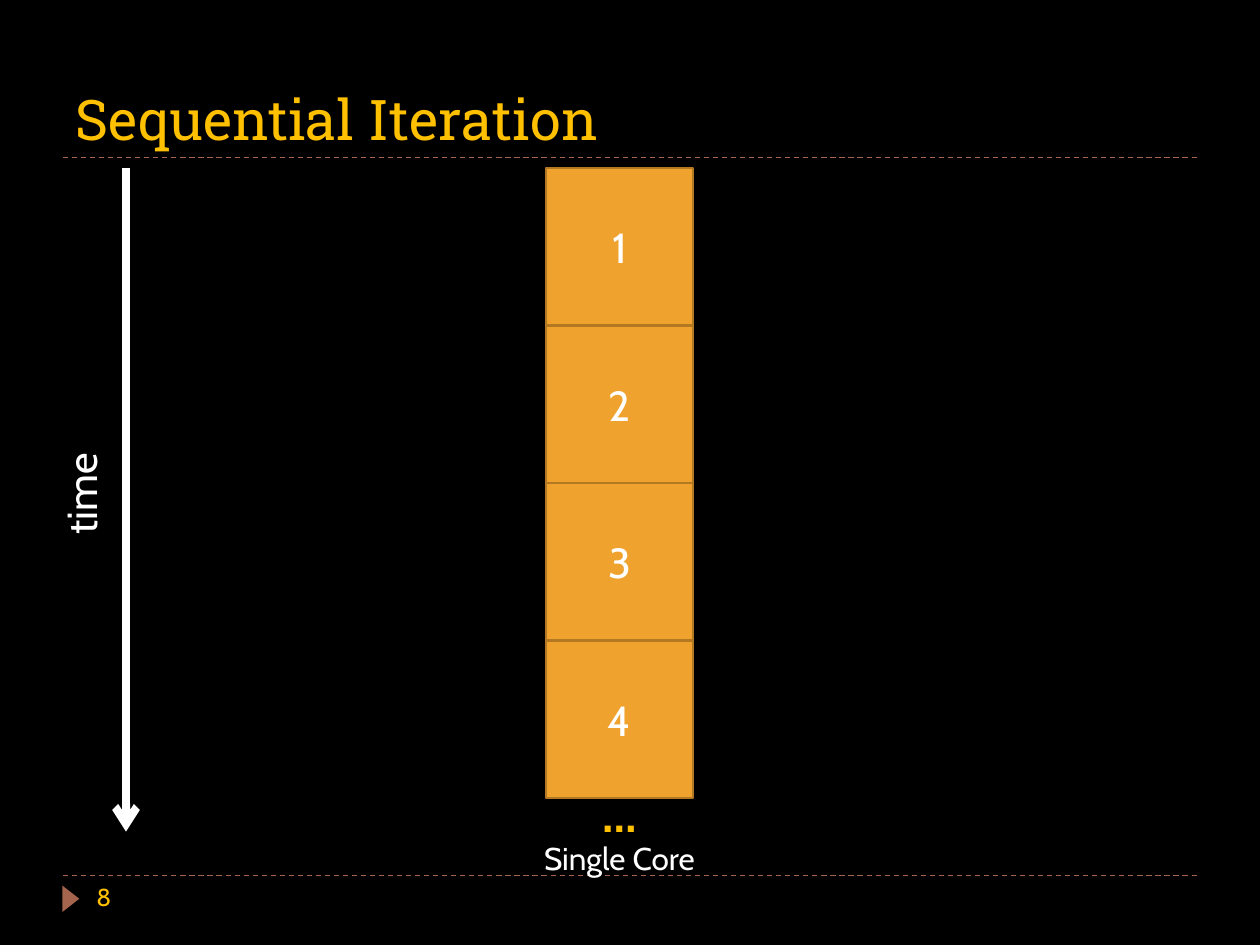
import dataclasses

import pptx
import pptx.dml.color
import pptx.enum.dml
import pptx.enum.shapes
import pptx.enum.text
import pptx.oxml
import pptx.oxml.ns
import pptx.util

PX = 7620  # EMU per px, 120 px to the inch
GOLD, WHITE, ORANGE, BROWN, RUST = "FFC000", "FFFFFF", "F0A22E", "B27822", "A5644E"
SHAPE = pptx.enum.shapes.MSO_SHAPE
ALIGN = pptx.enum.text.PP_ALIGN
ANCHOR = pptx.enum.text.MSO_ANCHOR


@dataclasses.dataclass
class Label:
    text: str
    at: tuple[int, int, int, int]
    size: int
    color: str = WHITE
    font: str = "Cabin"
    bold: bool = False
    align: ALIGN = ALIGN.LEFT
    anchor: ANCHOR = ANCHOR.TOP
    vertical: bool = False


@dataclasses.dataclass
class Rule:
    start: tuple[int, int]
    end: tuple[int, int]
    color: str
    width: float
    dashed: bool = False
    arrow: bool = False


def px(*lengths: int) -> list[int]:
    return [pptx.util.Emu(length * PX) for length in lengths]


def rgb(color: str) -> pptx.dml.color.RGBColor:
    return pptx.dml.color.RGBColor.from_string(color)


def write(box, label: Label) -> None:
    frame = box.text_frame
    frame.word_wrap = not label.vertical
    frame.vertical_anchor = label.anchor
    if label.vertical:
        frame._txBody.bodyPr.set("vert", "vert270")
    para = frame.paragraphs[0]
    para.alignment = label.align
    span = para.add_run()
    span.text = label.text
    formats = {"name": label.font, "size": pptx.util.Pt(label.size), "bold": label.bold}
    for name, value in formats.items():
        setattr(span.font, name, value)
    span.font.color.rgb = rgb(label.color)


def draw_label(page, label: Label) -> None:
    write(page.shapes.add_textbox(*px(*label.at)), label)


def draw_rule(page, rule: Rule) -> None:
    line = page.shapes.add_connector(
        pptx.enum.shapes.MSO_CONNECTOR.STRAIGHT, *px(*rule.start, *rule.end))
    line.line.color.rgb = rgb(rule.color)
    line.line.width = pptx.util.Pt(rule.width)
    if rule.dashed:
        line.line.dash_style = pptx.enum.dml.MSO_LINE.DASH
    if rule.arrow:
        tail = pptx.oxml.parse_xml(
            f'<a:tailEnd {pptx.oxml.ns.nsdecls("a")} type="arrow"/>')
        line.line._get_or_add_ln().append(tail)
    line._element.spPr.append(
        pptx.oxml.parse_xml(f'<a:effectLst {pptx.oxml.ns.nsdecls("a")}/>'))


def draw_shape(page, kind: SHAPE, at: tuple[int, int, int, int], fill: str):
    shape = page.shapes.add_shape(kind, *px(*at))
    shape.shadow.inherit = False
    shape.fill.solid()
    shape.fill.fore_color.rgb = rgb(fill)
    shape.line.fill.background()
    return shape


def draw_task(page, label: Label) -> None:
    box = draw_shape(page, SHAPE.RECTANGLE, label.at, ORANGE)
    box.line.color.rgb = rgb(BROWN)
    box.line.width = pptx.util.Pt(1.5)
    write(box, label)


def main() -> None:
    deck = pptx.Presentation()
    deck.slide_width, deck.slide_height = px(1200, 900)
    page = deck.slides.add_slide(deck.slide_layouts[6])
    page.background.fill.solid()
    page.background.fill.fore_color.rgb = rgb("000000")

    # Frame: dashed rules, page marker, title and page number
    for y in (834, 150):
        draw_rule(page, Rule((60, y), (1140, y), RUST, 0.75, dashed=True))
    marker = draw_shape(page, SHAPE.ISOSCELES_TRIANGLE, (55, 848, 25, 16), RUST)
    marker.rotation = 90
    draw_label(page, Label("Sequential Iteration", (60, 20, 1080, 130), 32, GOLD,
                           "Roboto Slab", anchor=ANCHOR.BOTTOM))
    draw_label(page, Label("8", (80, 834, 260, 48), 14, GOLD))

    # Stack of tasks on one core
    left, top, width, height = 520, 160, 140, 150
    for index in range(4):
        at = (left, top + index * height, width, height)
        draw_task(page, Label(str(index + 1), at, 24,
                              align=ALIGN.CENTER, anchor=ANCHOR.MIDDLE))
    draw_label(page, Label("…", (left, 740, width, 68), 28, GOLD,
                           bold=True, align=ALIGN.CENTER))
    draw_label(page, Label("Single Core", (500, 793, 180, 48), 18, align=ALIGN.CENTER))

    # Time axis
    draw_rule(page, Rule((120, top), (120, 792), WHITE, 4.5, arrow=True))
    draw_label(page, Label("time", (47, 431, 73, 90), 24, vertical=True))

    deck.save("out.pptx")


if __name__ == "__main__":
    main()
